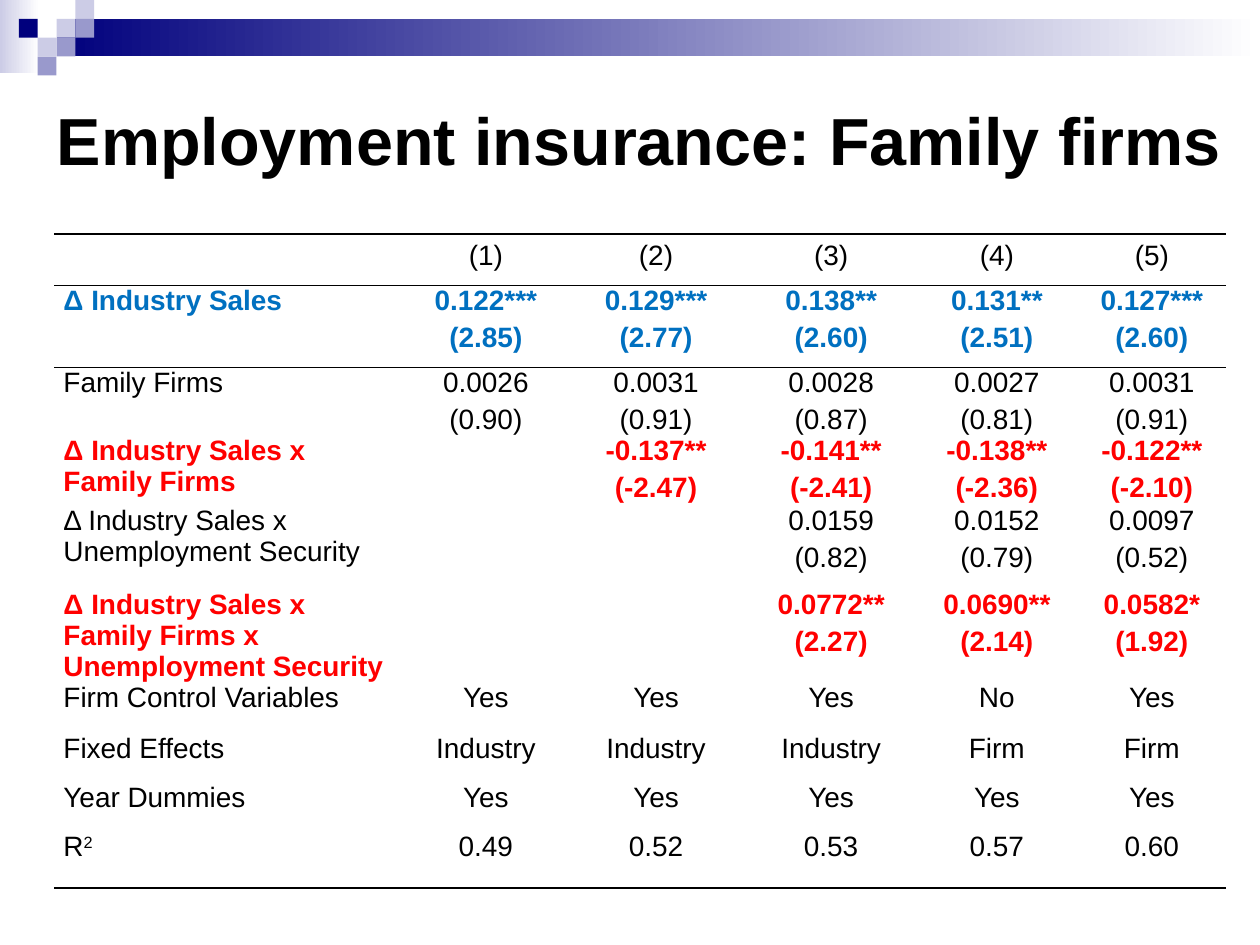
from lxml.etree import SubElement
from pptx import Presentation
from pptx.dml.color import RGBColor
from pptx.enum.shapes import MSO_SHAPE
from pptx.enum.text import MSO_ANCHOR, MSO_AUTO_SIZE, PP_ALIGN
from pptx.oxml.ns import qn
from pptx.util import Cm, Pt

FONT = "Arial"
BLACK, BLUE, RED = "000000", "0070C0", "FF0000"
NAVY, LILAC, VIOLET, WHITE = "00007D", "CCCCE6", "9999CC", "FFFFFF"
PLAIN_TABLE_STYLE = "{2D5ABB26-0587-4C30-8999-92F81FD0307C}"

COLUMN_WIDTHS = [7.09, 3.23, 3.63, 3.43, 3.25, 3.0]
# Row height, text colour, label (^ marks a superscript), one entry per model
ROWS = [
    (0.97, BLACK, "", ["(1)", "(2)", "(3)", "(4)", "(5)"]),
    (1.65, BLUE, "Δ Industry Sales",
     ["0.122***\n(2.85)", "0.129***\n(2.77)", "0.138**\n(2.60)",
      "0.131**\n(2.51)", "0.127***\n(2.60)"]),
    (1.37, BLACK, "Family Firms",
     ["0.0026\n(0.90)", "0.0031\n(0.91)", "0.0028\n(0.87)",
      "0.0027\n(0.81)", "0.0031\n(0.91)"]),
    (1.4, RED, "Δ Industry Sales x Family Firms",
     ["", "-0.137**\n(-2.47)", "-0.141**\n(-2.41)",
      "-0.138**\n(-2.36)", "-0.122**\n(-2.10)"]),
    (1.7, BLACK, "Δ Industry Sales x Unemployment Security",
     ["", "", "0.0159\n(0.82)", "0.0152\n(0.79)", "0.0097\n(0.52)"]),
    (1.7, RED, "Δ Industry Sales x Family Firms x Unemployment Security",
     ["", "", "0.0772**\n(2.27)", "0.0690**\n(2.14)", "0.0582*\n(1.92)"]),
    (1.02, BLACK, "Firm Control Variables", ["Yes", "Yes", "Yes", "No", "Yes"]),
    (0.99, BLACK, "Fixed Effects",
     ["Industry", "Industry", "Industry", "Firm", "Firm"]),
    (0.99, BLACK, "Year Dummies", ["Yes"] * 5),
    (1.14, BLACK, "R^2", ["0.49", "0.52", "0.53", "0.57", "0.60"]),
]


def color(hex_string):
    return RGBColor.from_string(hex_string)


def add_block(page, left, top, width, height, *colors):
    """Add a borderless rectangle: one colour is solid, two are a gradient."""
    block = page.shapes.add_shape(
        MSO_SHAPE.RECTANGLE, Cm(left), Cm(top), Cm(width), Cm(height))
    block.shadow.inherit = False
    block.line.fill.background()
    if len(colors) == 1:
        block.fill.solid()
        block.fill.fore_color.rgb = color(colors[0])
    else:
        block.fill.gradient()
        block.fill.gradient_angle = 0
        for stop, shade in zip(block.fill.gradient_stops, colors):
            stop.color.rgb = color(shade)


def add_banner(page, left, top, width):
    unit = 0.38
    add_block(page, left, top, 0.79, 1.47, LILAC, WHITE)
    add_block(page, left + 3 * unit, top + unit,
              width - 3 * unit, 2 * unit, NAVY, WHITE)
    squares = [(3, 1, LILAC), (4, 0, LILAC), (4, 1, VIOLET), (2, 2, LILAC),
               (1, 1, NAVY), (3, 2, VIOLET), (2, 3, VIOLET)]
    for column, row, shade in squares:
        add_block(page, left + column * unit, top + row * unit,
                  unit, unit, shade)


def place_title(page, left, top, width, height):
    title = page.shapes.title
    title.left, title.top = Cm(left), Cm(top)
    title.width, title.height = Cm(width), Cm(height)
    frame = title.text_frame
    frame.text = "Employment insurance: Family firms"
    frame.vertical_anchor = MSO_ANCHOR.MIDDLE
    frame.auto_size = MSO_AUTO_SIZE.NONE
    para = frame.paragraphs[0]
    para.alignment = PP_ALIGN.LEFT
    style_font(para.font, 38, BLACK, True)


def style_font(font, size, shade, bold):
    font.name = FONT
    font.size = Pt(size)
    font.bold = bold
    font.color.rgb = color(shade)


def add_rule(cell, tag):
    """Draw a thin black border on the side named by tag."""
    border = SubElement(cell._tc.get_or_add_tcPr(), qn(tag), w=str(Pt(1)))
    fill = SubElement(border, qn("a:solidFill"))
    SubElement(fill, qn("a:srgbClr"), val=BLACK)


def fill_cell(cell, text, shade, alignment, space):
    for index, line in enumerate(text.split("\n") if text else []):
        frame = cell.text_frame
        para = frame.paragraphs[0] if index == 0 else frame.add_paragraph()
        para.alignment = alignment
        para.space_before = Pt(space)
        style_font(para.font, 16, shade, shade != BLACK)
        base, _, raised = line.partition("^")
        para.add_run().text = base
        if raised:
            span = para.add_run()
            span.text = raised
            span._r.get_or_add_rPr().set("baseline", "30000")


def add_results(page, left, top):
    heights = [row[0] for row in ROWS]
    table = page.shapes.add_table(
        len(ROWS), len(COLUMN_WIDTHS), Cm(left), Cm(top),
        Cm(sum(COLUMN_WIDTHS)), Cm(sum(heights))).table
    table.first_row = table.horz_banding = False
    table._tbl.tblPr.find(qn("a:tableStyleId")).text = PLAIN_TABLE_STYLE
    for column, width in zip(table.columns, COLUMN_WIDTHS):
        column.width = Cm(width)

    last = len(ROWS) - 1
    for row_index, (height, shade, label, values) in enumerate(ROWS):
        table.rows[row_index].height = Cm(height)
        is_header = row_index == 0
        for column_index, text in enumerate([label, *values]):
            cell = table.cell(row_index, column_index)
            cell.margin_left = cell.margin_right = Cm(0.25 if is_header else 0.19)
            cell.margin_top = cell.margin_bottom = Cm(0.13 if is_header else 0)
            if row_index in (0, 1):
                add_rule(cell, "a:lnT")
            if row_index in (0, last):
                add_rule(cell, "a:lnB")
            cell.fill.background()
            if column_index == 0:
                fill_cell(cell, text, shade, PP_ALIGN.LEFT, 3.9)
            else:
                fill_cell(cell, text, shade, PP_ALIGN.CENTER,
                          3.2 if is_header else 3.4)


def main():
    deck = Presentation()
    deck.slide_width, deck.slide_height = Cm(25.4), Cm(19.05)
    page = deck.slides.add_slide(deck.slide_layouts.get_by_name("Title Only"))
    add_banner(page, 0, 0, 25.4)
    place_title(page, 0.89, 1.27, 24, 3.05)
    add_results(page, 1.09, 4.72)
    deck.save("out.pptx")


if __name__ == "__main__":
    main()
